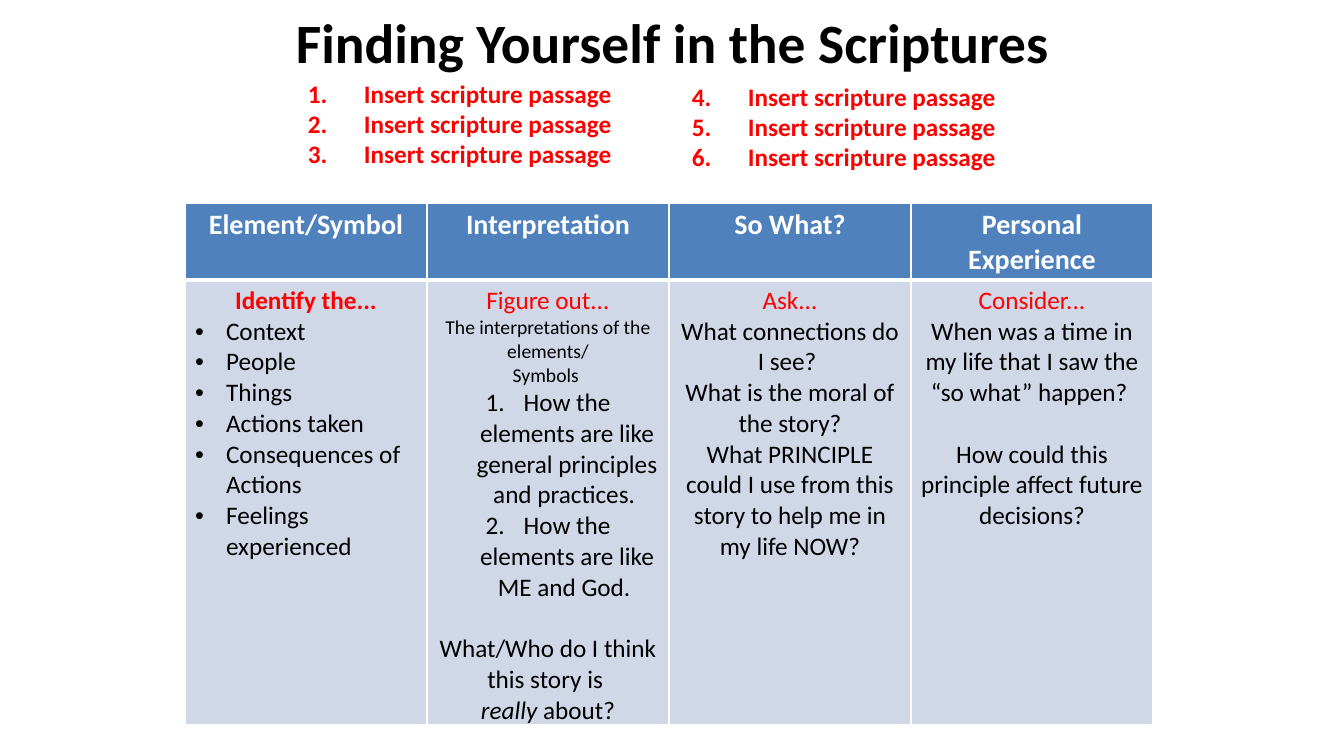
"""Builds the scripture study slide with its passage lists and study table."""
from dataclasses import dataclass

from lxml.etree import SubElement
from pptx import Presentation
from pptx.dml.color import RGBColor
from pptx.enum.text import MSO_ANCHOR, MSO_AUTO_SIZE, PP_ALIGN
from pptx.oxml.ns import qn
from pptx.util import Emu, Pt

COLORS = {
    "black": "000000",
    "red": "FF0000",
    "white": "FFFFFF",
    "header": "4F81BD",
    "body": "D0D8E8",
}
FONT = "Calibri"
COLUMN_WIDTH = 242
ROW_HEIGHTS = (77, 443)


@dataclass
class Line:
    """One paragraph; an italic lead, if any, precedes its text."""

    text: str
    size: float = 18
    color: str = "black"
    bold: bool = False
    centered: bool = True
    marker: str = ""
    start: int = 1
    indent: int = 0
    before: int = 0
    lead: str = ""


def bullet(text):
    """Return a bulleted line."""
    return Line(text, centered=False, marker="•", indent=31)


def step(text):
    """Return a numbered, centred line."""
    return Line(text, marker="number", indent=38)


STUDY_COLUMNS = (
    ("Element/Symbol", [
        Line("Identify the...", color="red", bold=True),
        *map(bullet, ("Context", "People", "Things", "Actions taken",
                      "Consequences of Actions", "Feelings experienced")),
    ]),
    ("Interpretation", [
        Line("Figure out...", color="red"),
        Line("The interpretations of the elements/", size=14),
        Line("Symbols ", size=14),
        step("How the elements are like general principles and practices. "),
        step("How the elements are like ME and God. "),
        Line("What/Who do I think this story is ", before=22),
        Line(" about?", lead="really"),
    ]),
    ("So What?", [
        Line("Ask...", color="red"),
        Line("What connections do I see? "),
        Line("What is the moral of the story?"),
        Line("What PRINCIPLE"),
        Line("could I use from this story to help me in my life NOW?"),
    ]),
    ("Personal Experience", [
        Line("Consider...", color="red"),
        Line("When was a time in my life that I saw the “so what” happen? "),
        Line("How could this principle affect future decisions?", before=22),
    ]),
)


def px(length):
    """Convert px to EMU."""
    return Emu(round(length * 914400 / 100.8))


def rgb(name):
    """Look up a named colour."""
    return RGBColor.from_string(COLORS[name])


def add_marker(paragraph, line):
    """Give a paragraph its hanging indent and bullet or number."""
    properties = paragraph._p.get_or_add_pPr()
    properties.set("marL", str(px(line.indent)))
    properties.set("indent", str(-px(line.indent)))
    if line.marker == "number":
        number = SubElement(properties, qn("a:buAutoNum"), type="arabicPeriod")
        if line.start > 1:
            number.set("startAt", str(line.start))
    else:
        SubElement(properties, qn("a:buFont"), typeface="Arial")
        SubElement(properties, qn("a:buChar"), char=line.marker)


def write_lines(frame, lines):
    """Fill a text frame with formatted lines."""
    frame.word_wrap = True
    for index, line in enumerate(lines):
        paragraph = frame.add_paragraph() if index else frame.paragraphs[0]
        paragraph.text = line.lead or line.text
        if line.lead:
            paragraph.runs[0].font.italic = True
            paragraph.add_run().text = line.text
        paragraph.alignment = PP_ALIGN.CENTER if line.centered else PP_ALIGN.LEFT
        if line.before:
            paragraph.space_before = Pt(line.before)
        if line.marker:
            add_marker(paragraph, line)
        for run in paragraph.runs:
            run.font.name = FONT
            run.font.size = Pt(line.size)
            run.font.bold = line.bold
            run.font.color.rgb = rgb(line.color)


def add_title(slide, text):
    """Add the centred slide heading."""
    heading = slide.shapes.add_textbox(px(219), px(9), px(907), px(65)).text_frame
    heading.vertical_anchor = MSO_ANCHOR.MIDDLE
    write_lines(heading, [Line(text, size=39.6, bold=True)])


def add_passages(slide, left, top, start):
    """Add three numbered scripture passages."""
    passages = slide.shapes.add_textbox(px(left), px(top), px(504), px(101)).text_frame
    passage = Line("Insert scripture passage", color="red", bold=True,
                   centered=False, marker="number", start=start, indent=56)
    write_lines(passages, [passage] * 3)
    passages.auto_size = MSO_AUTO_SIZE.SHAPE_TO_FIT_TEXT


def add_borders(cell, top, bottom):
    """Draw white cell borders with the given top and bottom widths."""
    properties = cell._tc.get_or_add_tcPr()
    for side, width in (("L", 1), ("R", 1), ("T", top), ("B", bottom)):
        border = SubElement(properties, qn(f"a:ln{side}"), w=str(Pt(width)))
        fill = SubElement(border, qn("a:solidFill"))
        SubElement(fill, qn("a:srgbClr"), val=COLORS["white"])


def fill_cell(cell, lines, color, top, bottom):
    """Write and style one table cell."""
    write_lines(cell.text_frame, lines)
    add_borders(cell, top, bottom)
    cell.fill.solid()
    cell.fill.fore_color.rgb = rgb(color)


def add_study_table(slide):
    """Add the table of study questions."""
    count = len(STUDY_COLUMNS)
    table = slide.shapes.add_table(2, count, px(185), px(203),
                                   px(COLUMN_WIDTH * count), px(sum(ROW_HEIGHTS))).table
    for row, height in zip(table.rows, ROW_HEIGHTS):
        row.height = px(height)
    for index, (heading, questions) in enumerate(STUDY_COLUMNS):
        table.columns[index].width = px(COLUMN_WIDTH)
        header = Line(heading, size=20, color="white", bold=True)
        fill_cell(table.cell(0, index), [header], "header", top=1, bottom=3)
        fill_cell(table.cell(1, index), questions, "body", top=3, bottom=1)


def main():
    """Build and save the slide."""
    deck = Presentation()
    deck.slide_width, deck.slide_height = px(1344), px(756)
    slide = deck.slides.add_slide(deck.slide_layouts[6])
    add_title(slide, "Finding Yourself in the Scriptures")
    add_passages(slide, left=298, top=73, start=1)
    add_study_table(slide)
    add_passages(slide, left=682, top=76, start=4)
    deck.save("out.pptx")


if __name__ == "__main__":
    main()
